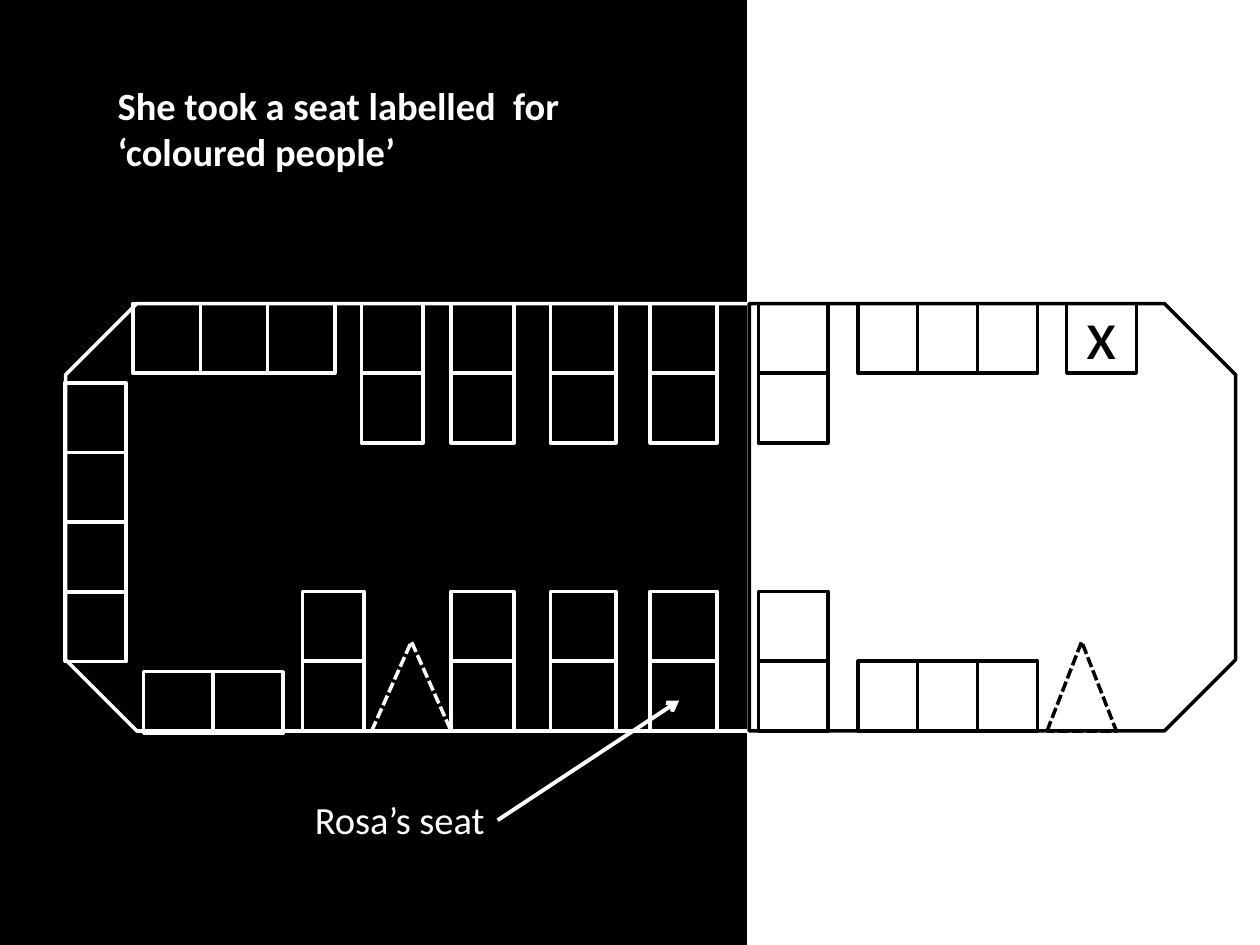
from lxml import etree
from pptx import Presentation
from pptx import util as u
from pptx.dml import color
from pptx.enum import dml, shapes, text
from pptx.oxml import ns

BLACK = color.RGBColor(0, 0, 0)
WHITE = color.RGBColor(255, 255, 255)
FONT = "Calibri"
KIND = shapes.MSO_SHAPE

SEAT = 39.8                  # depth of one seat
TOP = 173.5                  # upper wall of the bus
FLOOR = TOP + 244.2          # lower wall of the bus
LOW = FLOOR - 2 * SEAT       # first of two seats at the lower wall
TITLE = "She took a seat labelled  for ‘coloured people’"


class Board:
    """Holds the type and line style and the slide being drawn."""

    def __init__(self, slide, font=FONT, weight=2):
        self.slide, self.font, self.weight = slide, font, weight
        back = slide.background.fill
        back.solid()
        back.fore_color.rgb = BLACK

    def shape(self, kind, box, ink, fill=None, turn=0, dash=None, home=None):
        home = home or self.slide
        item = home.shapes.add_shape(kind, *map(u.Pt, box))
        item.shadow.inherit = False
        item.rotation = turn
        if fill is None:
            item.fill.background()
        else:
            item.fill.solid()
            item.fill.fore_color.rgb = fill
        item.line.color.rgb = ink
        item.line.width = u.Pt(self.weight)
        if dash:
            item.line.dash_style = dash

    def seats(self, left, top, wide, high, count, ink, across=False):
        """Draw a group of touching seats, down the slide or across it."""
        group = self.slide.shapes.add_group_shape()
        for i in range(count):
            x = left + i * wide * across
            y = top + i * high * (not across)
            self.shape(KIND.RECTANGLE, (x, y, wide, high), ink, home=group)

    def door(self, left, wide, ink):
        high = 51.1
        self.shape(KIND.ISOSCELES_TRIANGLE, (left, FLOOR - high, wide, high),
                   ink, dash=dml.MSO_LINE.SQUARE_DOT)

    def letter(self, item, words, size, ink, align=text.PP_ALIGN.LEFT, bold=False):
        """Put styled words into a shape."""
        frame = item.text_frame
        frame.text = words
        frame.word_wrap = True
        frame.auto_size = text.MSO_AUTO_SIZE.SHAPE_TO_FIT_TEXT
        frame.vertical_anchor = text.MSO_ANCHOR.TOP
        para = frame.paragraphs[0]
        para.alignment = align
        para.font.name, para.font.size = self.font, u.Pt(size)
        para.font.bold, para.font.color.rgb = bold, ink

    def title(self, box, words, size, ink):
        item = self.slide.shapes.title
        item.left, item.top, item.width, item.height = map(u.Pt, box)
        self.letter(item, words, size, ink, bold=True)

    def label(self, box, words, size, ink, align=text.PP_ALIGN.LEFT):
        item = self.slide.shapes.add_textbox(*map(u.Pt, box))
        self.letter(item, words, size, ink, align)

    def arrow(self, start, end, ink, weight):
        item = self.slide.shapes.add_connector(
            shapes.MSO_CONNECTOR.STRAIGHT, *map(u.Pt, start + end))
        item.line.color.rgb = ink
        item.line.width = u.Pt(weight)
        props = item._element.spPr
        line = props.find(ns.qn("a:ln"))
        etree.SubElement(line, ns.qn("a:tailEnd"), type="arrow")
        etree.SubElement(props, ns.qn("a:effectLst"))


def main():
    deck = Presentation()
    deck.slide_width, deck.slide_height = u.Pt(720), u.Pt(540)
    board = Board(deck.slides.add_slide(deck.slide_layouts[5]))

    board.shape(KIND.RECTANGLE, (427.7, 0, 337.7, 540), WHITE, WHITE)
    board.title((60, 43.2, 306, 60.5), TITLE, 22, WHITE)

    # Bus body: rear half, then front half
    snip = KIND.SNIP_2_SAME_RECTANGLE
    board.shape(snip, (110.9, 100.1, 244.2, 391), WHITE, turn=270)
    board.shape(snip, (445, 156.6, 244.2, 277.9), BLACK, turn=90)

    # Pairs of seats: left, width, colour, tops
    for left, wide, ink, tops in (
        (172.8, 35.3, WHITE, (LOW,)),
        (206.6, 35.3, WHITE, (TOP,)),
        (257.8, 36, WHITE, (TOP, LOW)),
        (314.6, 37.4, WHITE, (TOP, LOW)),
        (371.5, 38.2, WHITE, (TOP, LOW)),
        (433.4, SEAT, BLACK, (TOP, LOW)),
    ):
        for top in tops:
            board.seats(left, top, wide, SEAT, 2, ink)

    # Benches along the walls
    board.seats(76.1, TOP, 38.4, SEAT, 3, WHITE, across=True)
    board.seats(82.1, 383.8, SEAT, 35.3, 2, WHITE, across=True)
    for top in (TOP, FLOOR - SEAT):
        board.seats(490.2, top, 34.2, SEAT, 3, BLACK, across=True)
    board.seats(36.8, 218.8, 35.3, SEAT, 4, WHITE)

    # Driver
    board.shape(KIND.RECTANGLE, (609.6, TOP, SEAT, SEAT), BLACK)
    board.label((586.8, 162, 85, 55.7), "x", 40, BLACK, text.PP_ALIGN.CENTER)

    board.door(212.4, 45.4, WHITE)
    board.door(598.3, 39.6, BLACK)

    board.arrow((284.4, 468.7), (388.1, 400.3), WHITE, 2.25)
    board.label((172.8, 451.4, 121, 33.9), "Rosa’s seat", 22, WHITE)
    deck.save("out.pptx")


if __name__ == "__main__":
    main()
